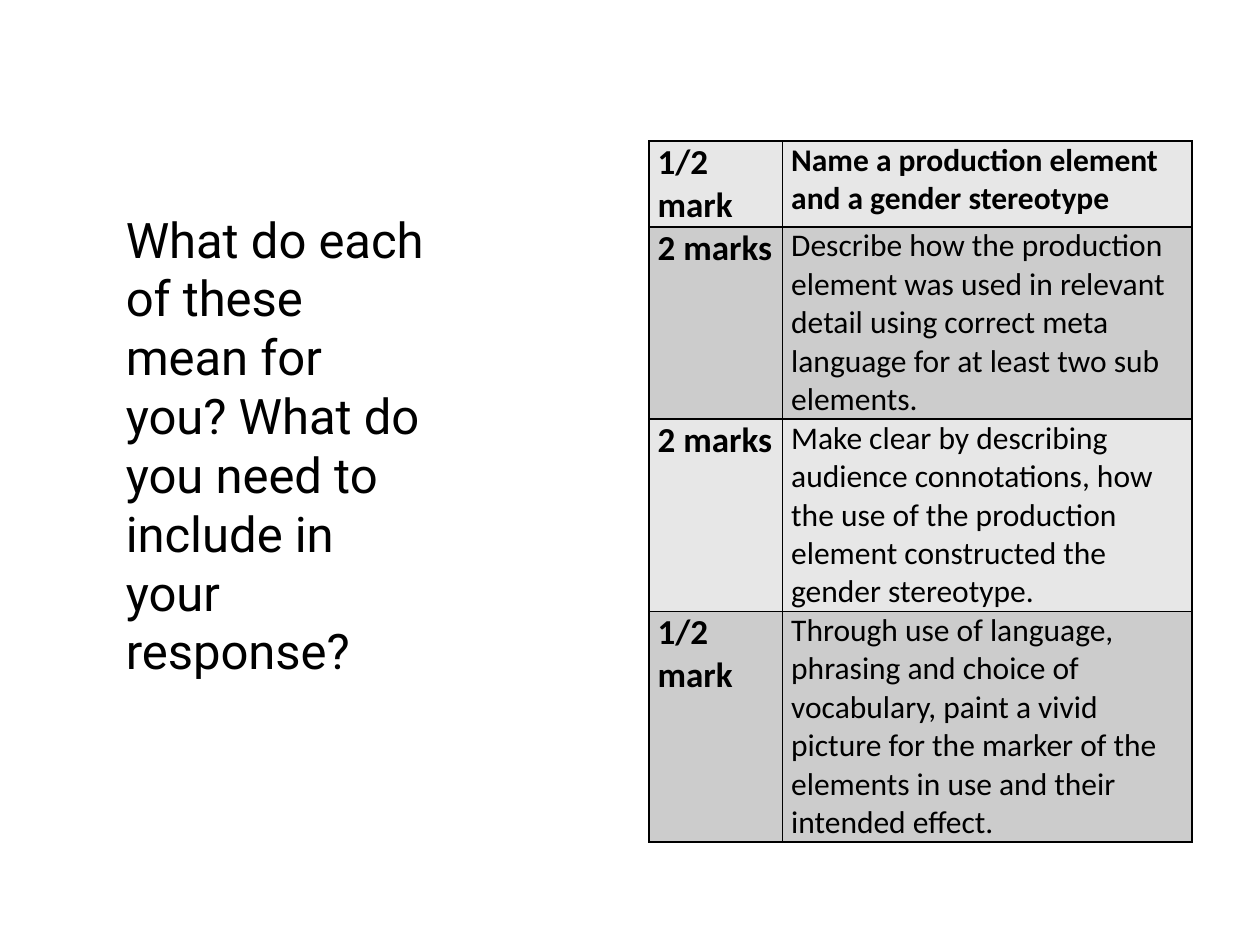
from lxml import etree
from pptx import Presentation
from pptx import util as u
from pptx.dml.color import RGBColor
from pptx.enum import text
from pptx.oxml import ns

ROWS = [
    ("1/2 mark", "Name a production element and a gender stereotype", 0.67),
    ("2 marks", "Describe how the production element was used in relevant detail "
     "using correct meta language for at least two sub elements.", 1.5),
    ("2 marks", "Make clear by describing audience connotations, how the use of "
     "the production element constructed the gender stereotype.", 1.5),
    ("1/2 mark", "Through use of language, phrasing and choice of vocabulary, paint "
     "a vivid picture for the marker of the elements in use and their intended effect.", 1.8),
]
QUESTION = "What do each of these mean for you? What do you need to include in your response?"


def color(value):
    """Turn a hex string into a colour."""
    return RGBColor.from_string(value)


class MarkingPage:
    """Holds the style and the current slide."""

    ink = "000000"
    bands = ("E7E7E7", "CCCCCC")

    def __init__(self, page):
        self.page = page

    def format_text(self, frame, words, font, size, bold=False):
        """Fill a text frame and format its runs."""
        frame.text = words
        frame.word_wrap = True
        for para in frame.paragraphs:
            for span in para.runs:
                span.font.name = font
                span.font.size = u.Pt(size)
                span.font.bold = bold
                span.font.color.rgb = color(self.ink)

    def question(self, words, left, top, width, height):
        """Add the question as a growing text box."""
        box = self.page.shapes.add_textbox(*map(u.Inches, (left, top, width, height)))
        self.format_text(box.text_frame, words, "Roboto", 28)
        box.text_frame.auto_size = text.MSO_AUTO_SIZE.SHAPE_TO_FIT_TEXT

    def border(self, cell):
        """Draw a thin line on each side of a cell."""
        properties = cell._tc.get_or_add_tcPr()
        for index, side in enumerate(("a:lnL", "a:lnR", "a:lnT", "a:lnB")):
            line = etree.Element(ns.qn(side), w=str(u.Pt(1)))
            fill = etree.SubElement(line, ns.qn("a:solidFill"))
            etree.SubElement(fill, ns.qn("a:srgbClr"), val=self.ink)
            properties.insert(index, line)

    def cell(self, cell, words, size, bold, band):
        """Write and style one table cell."""
        self.format_text(cell.text_frame, words, "Calibri", size, bold)
        cell.margin_left = cell.margin_right = u.Inches(0.07)
        cell.margin_top = cell.margin_bottom = 0
        cell.fill.solid()
        cell.fill.fore_color.rgb = color(band)
        self.border(cell)

    def marks_table(self, rows, left, top, widths):
        """Add the table of marks and their criteria."""
        height = sum(row[2] for row in rows)
        frame = self.page.shapes.add_table(
            len(rows), len(widths), *map(u.Inches, (left, top, sum(widths), height)))
        table = frame.table
        for column, width in zip(table.columns, widths):
            column.width = u.Inches(width)
        for index, (mark, criterion, row_height) in enumerate(rows):
            table.rows[index].height = u.Inches(row_height)
            band = self.bands[index % 2]
            self.cell(table.cell(index, 0), mark, 20, True, band)
            self.cell(table.cell(index, 1), criterion, 18, index == 0, band)


def main():
    """Build and save the slide."""
    deck = Presentation()
    deck.slide_width, deck.slide_height = u.Inches(10), u.Inches(7.5)
    page = MarkingPage(deck.slides.add_slide(deck.slide_layouts[6]))
    page.marks_table(ROWS, 5.15, 1.12, (1.06, 3.25))
    page.question(QUESTION, 0.9, 1.61, 2.63, 4.34)
    deck.save("out.pptx")


if __name__ == "__main__":
    main()
